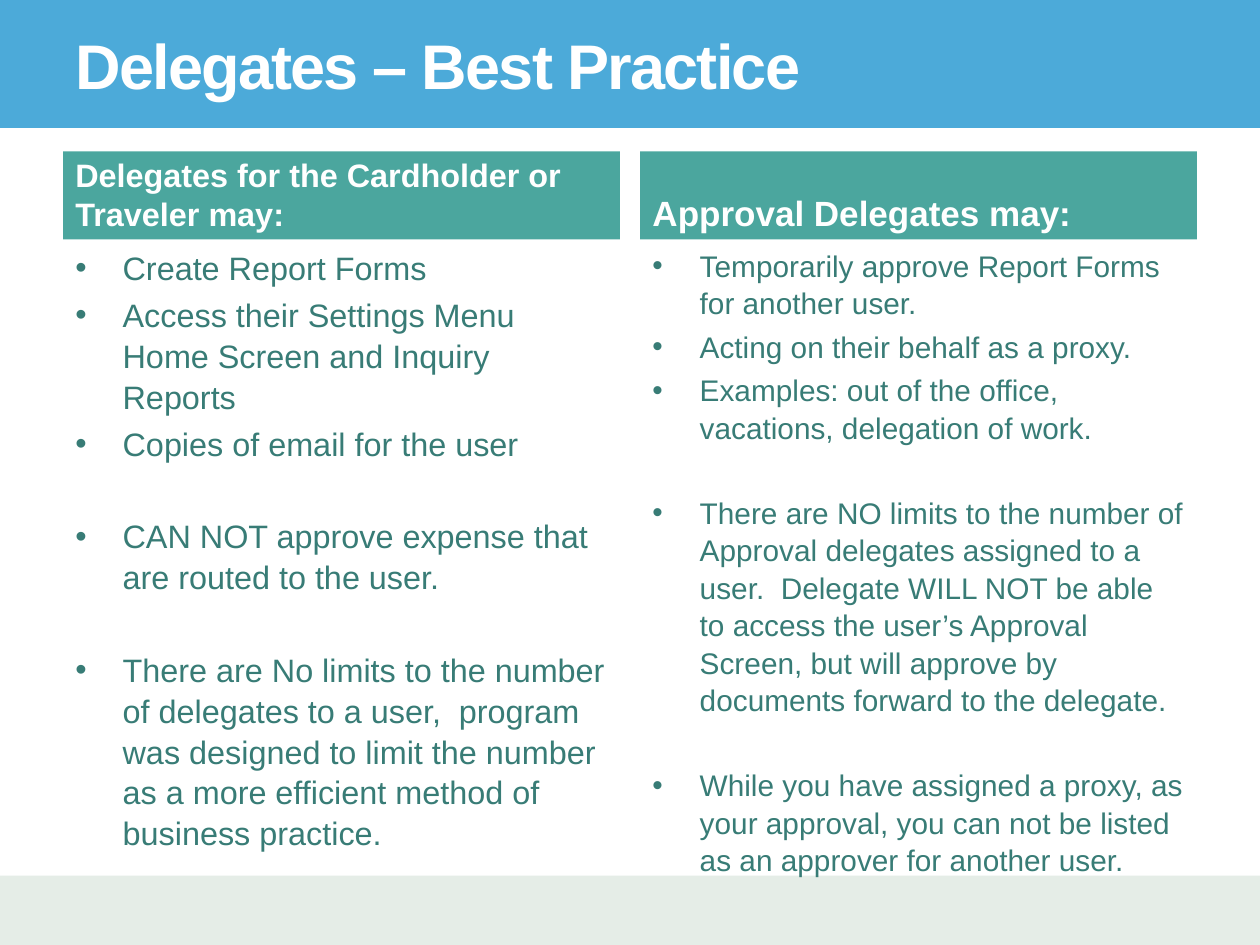
import pptx
import pptx.util
import pptx.dml.color
import pptx.enum.shapes
import pptx.enum.text
import pptx.oxml.ns
from lxml import etree

Pt = pptx.util.Pt
ANCHOR = pptx.enum.text.MSO_ANCHOR
WIDTH, HEIGHT = 720, 540
MARGIN, GUTTER = 36, 11.5
TITLE_HEIGHT = 73.2
FOOTER_HEIGHT = 39.6
HEADING_HEIGHT = 50.4
INDENT = 27

COLUMNS = [
    ("Delegates for the Cardholder or Traveler may:", 18.5, 18.5, [
        ["Create Report Forms",
         "Access their Settings Menu\vHome Screen and Inquiry Reports",
         "Copies of email for the user"],
        ["CAN NOT approve expense that are routed to the user."],
        ["There are No limits to the number of delegates to a user,  program was "
         "designed to limit the number as a more efficient method of business practice."],
    ]),
    ("Approval Delegates may:", 20, 17, [
        ["Temporarily approve Report Forms for another user.",
         "Acting on their behalf as a proxy.",
         "Examples: out of the office, vacations, delegation of work."],
        ["There are NO limits to the number of Approval delegates assigned to a user.  "
         "Delegate WILL NOT be able to access the user’s Approval Screen, but will "
         "approve by documents forward to the delegate."],
        ["While you have assigned a proxy, as your approval, you can not be listed "
         "as an approver for another user."],
    ]),
]


def rgb(value):
    return pptx.dml.color.RGBColor.from_string(value)


def add_band(s, x, y, w, h, fill):
    band = s.shapes.add_shape(pptx.enum.shapes.MSO_SHAPE.RECTANGLE,
                              Pt(x), Pt(y), Pt(w), Pt(h))
    band.shadow.inherit = False
    band.fill.solid()
    band.fill.fore_color.rgb = rgb(fill)
    band.line.fill.background()
    return band


def format_text(p, size, color, bold=False):
    p.alignment = pptx.enum.text.PP_ALIGN.LEFT
    for r in p.runs:
        r.font.name = "Arial"
        r.font.size = Pt(size)
        r.font.bold = bold
        r.font.color.rgb = rgb(color)


def add_text_box(s, x, y, w, h, anchor):
    tf = s.shapes.add_textbox(Pt(x), Pt(y), Pt(w), Pt(h)).text_frame
    tf.word_wrap = True
    tf.vertical_anchor = anchor
    return tf


def add_bullet(p):
    pPr = p._p.get_or_add_pPr()
    pPr.set("marL", str(Pt(INDENT)))
    pPr.set("indent", str(-Pt(INDENT)))
    font = etree.SubElement(pPr, pptx.oxml.ns.qn("a:buFont"))
    font.set("typeface", "Arial")
    bullet = etree.SubElement(pPr, pptx.oxml.ns.qn("a:buChar"))
    bullet.set("char", "•")


def add_title(s, x, y, w, h):
    add_band(s, x, y, w, h, "4CAAD9")
    tf = add_text_box(s, x + MARGIN, y, w - 2 * MARGIN, h, ANCHOR.MIDDLE)
    tf.text = "Delegates – Best Practice"
    p = tf.paragraphs[0]
    format_text(p, 36, "FFFFFF", True)
    p.runs[0].font._element.set("spc", "-100")


def add_column(s, x, y, w, h, heading, heading_size, body_size, groups):
    band = add_band(s, x, y, w, HEADING_HEIGHT, "4BA69E")
    tf = band.text_frame
    tf.word_wrap = True
    tf.vertical_anchor = ANCHOR.BOTTOM
    tf.text = heading
    format_text(tf.paragraphs[0], heading_size, "FFFFFF", True)

    tf = add_text_box(s, x, y + HEADING_HEIGHT, w, h - HEADING_HEIGHT, ANCHOR.TOP)
    p = tf.paragraphs[0]
    for group_index, group in enumerate(groups):
        for item_index, item in enumerate(group):
            if group_index or item_index:
                p = tf.add_paragraph()
                p.space_before = Pt(body_size * (0.2 if item_index else 1.6))
            p.line_spacing = 1.05
            p.text = item
            add_bullet(p)
            format_text(p, body_size, "387C76")


def main():
    prs = pptx.Presentation()
    prs.slide_width, prs.slide_height = Pt(WIDTH), Pt(HEIGHT)
    s = prs.slides.add_slide(prs.slide_layouts[6])
    add_band(s, 0, HEIGHT - FOOTER_HEIGHT, WIDTH, FOOTER_HEIGHT, "E5EDE7")
    add_title(s, 0, 0, WIDTH, TITLE_HEIGHT)
    column_width = (WIDTH - 2 * MARGIN - GUTTER) / 2
    for i, column in enumerate(COLUMNS):
        add_column(s, MARGIN + i * (column_width + GUTTER), 86.5,
                   column_width, 396, *column)
    prs.save("out.pptx")


if __name__ == "__main__":
    main()
